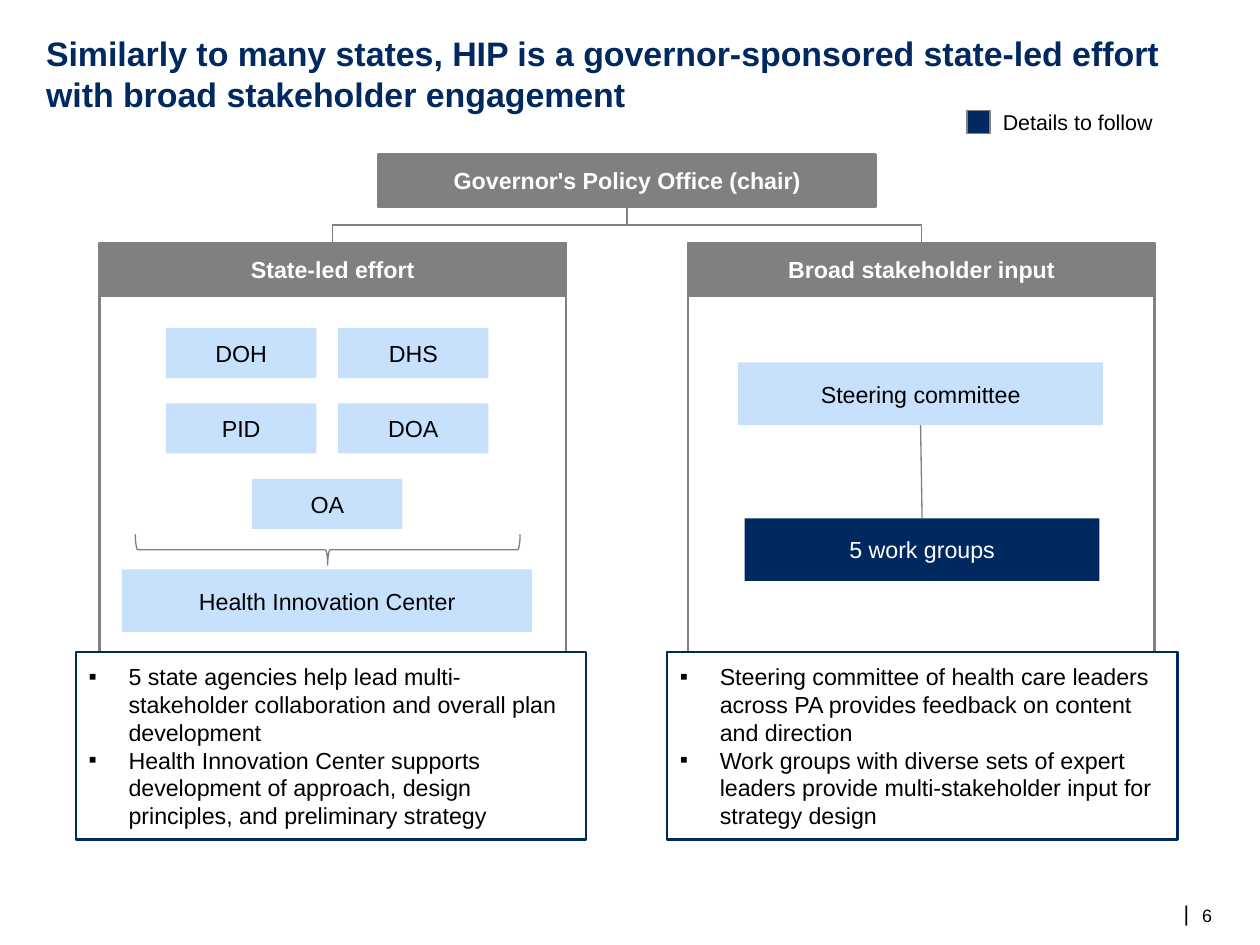
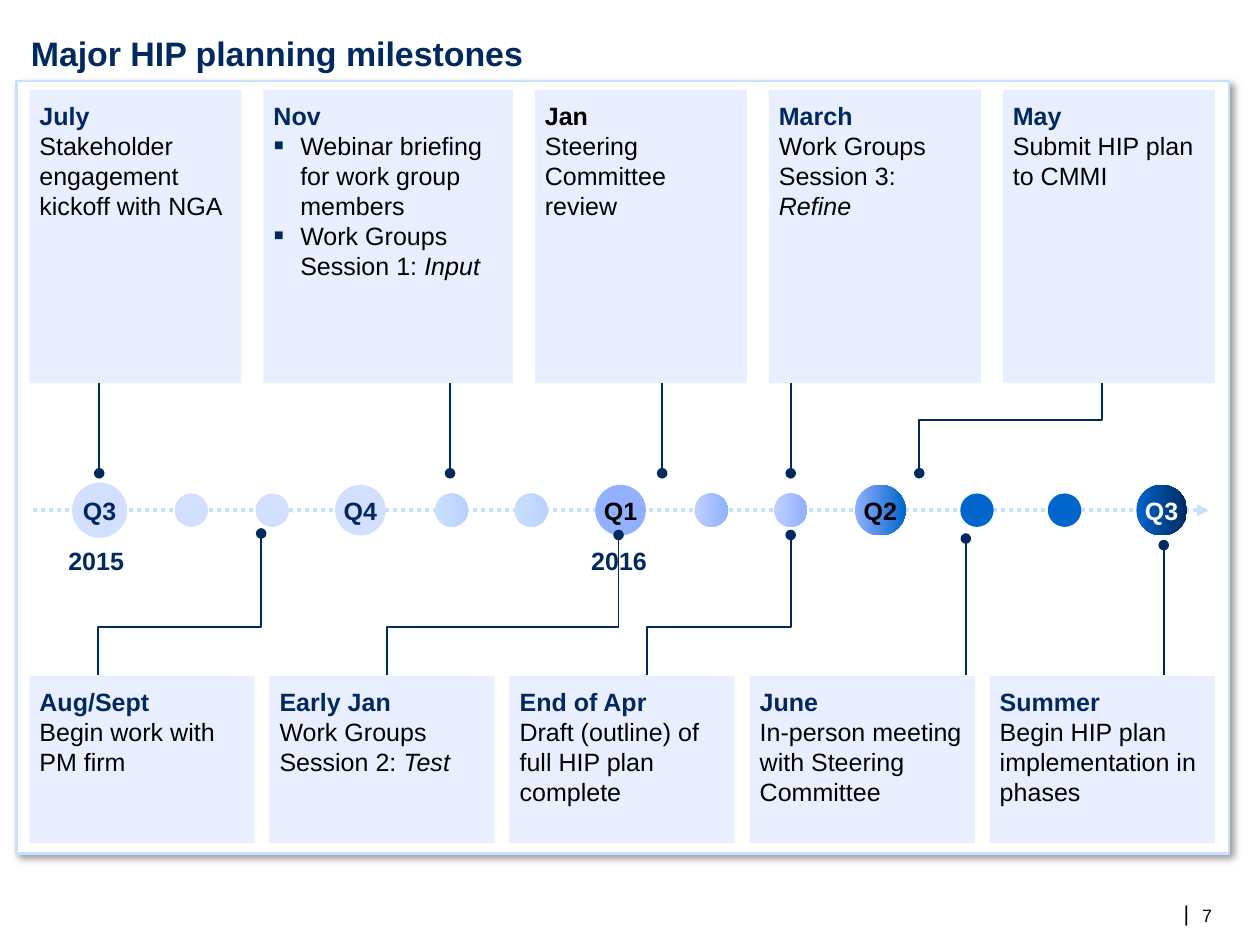
from typing import NamedTuple

from lxml.etree import SubElement
from pptx import Presentation
from pptx.dml.color import RGBColor
from pptx.enum.dml import MSO_LINE
from pptx.enum.shapes import MSO_CONNECTOR, MSO_SHAPE
from pptx.enum.text import MSO_ANCHOR, MSO_AUTO_SIZE, PP_ALIGN
from pptx.oxml.ns import qn
from pptx.util import Cm, Pt

NAVY = RGBColor(0x00, 0x29, 0x60)
BLUE = RGBColor(0x00, 0x66, 0xCC)
PERIWINKLE = RGBColor(0x91, 0xB0, 0xFF)
LAVENDER = RGBColor(0xBD, 0xD0, 0xFF)
PALE_LAVENDER = RGBColor(0xD3, 0xDF, 0xFF)
SKY = RGBColor(0xC7, 0xE0, 0xFB)
MIST = RGBColor(0xE9, 0xEF, 0xFF)
GRAY = RGBColor(0x80, 0x80, 0x80)
BLACK = RGBColor(0x00, 0x00, 0x00)
WHITE = RGBColor(0xFF, 0xFF, 0xFF)
FONT = "Arial"


class Box(NamedTuple):
    """A rectangle in centimetres."""
    left: float
    top: float
    width: float
    height: float

    def inner(self, left, top, width, height):
        """Return a box placed relative to this one."""
        return Box(self.left + left, self.top + top, width, height)

    def lengths(self):
        """Return the four sides as lengths."""
        return [Cm(value) for value in self]


def add_span(para, text, size, color=BLACK, bold=False, italic=False):
    """Append one formatted run."""
    span = para.add_run()
    span.text = text
    font = span.font
    font.name, font.size, font.bold, font.italic = FONT, Pt(size), bold, italic
    font.color.rgb = color


def set_frame(frame, anchor, inset_x=0.0, inset_y=0.0, wrap=True):
    """Set the anchor, insets and wrapping of a text frame."""
    frame.auto_size = MSO_AUTO_SIZE.NONE
    frame.word_wrap = wrap
    frame.vertical_anchor = anchor
    frame.margin_left = frame.margin_right = Cm(inset_x)
    frame.margin_top = frame.margin_bottom = Cm(inset_y)


def add_bullet(para, indent, color=BLACK, percent=100):
    """Give a paragraph a square bullet with a hanging indent."""
    properties = para._p.get_or_add_pPr()
    properties.set("marL", str(Cm(indent)))
    properties.set("indent", str(-Cm(indent)))
    tint = SubElement(properties, qn("a:buClr"))
    SubElement(tint, qn("a:srgbClr"), val=str(color))
    SubElement(properties, qn("a:buSzPct"), val=str(percent * 1000))
    SubElement(properties, qn("a:buFont"), typeface=FONT)
    SubElement(properties, qn("a:buChar"), char="▪")


def add_block(page, box, fill=None, outline=None, weight=1.5, shape=MSO_SHAPE.RECTANGLE):
    """Add a flat preset shape; two fill colours make a gradient."""
    block = page.shapes.add_shape(shape, *box.lengths())
    block.shadow.inherit = False
    if fill is None:
        block.fill.background()
    elif isinstance(fill, list):
        block.fill.gradient()
        block.fill.gradient_angle = 0
        for stop, color in zip(block.fill.gradient_stops, fill):
            stop.color.rgb = color
    else:
        block.fill.solid()
        block.fill.fore_color.rgb = fill
    if outline is None:
        block.line.fill.background()
    else:
        block.line.color.rgb = outline
        block.line.width = Pt(weight)
    return block


def add_label_block(page, box, text, fill=SKY, color=BLACK, bold=False, outline=None):
    """Add a rectangle with a centred label."""
    block = add_block(page, box, fill, outline)
    set_frame(block.text_frame, MSO_ANCHOR.MIDDLE, 0.25, 0.13)
    para = block.text_frame.paragraphs[0]
    para.alignment = PP_ALIGN.CENTER
    add_span(para, text, 13, color, bold)
    return block


def add_text(page, box, text, size, color=BLACK, bold=False, anchor=MSO_ANCHOR.TOP):
    """Add a line of plain text."""
    frame = page.shapes.add_textbox(*box.lengths()).text_frame
    set_frame(frame, anchor)
    add_span(frame.paragraphs[0], text, size, color, bold)


def style_line(line_shape, color, weight, tail=None, dash=None):
    """Format a line, with an optional dash and end mark."""
    line_shape.line.color.rgb = color
    line_shape.line.width = Pt(weight)
    if dash is not None:
        line_shape.line.dash_style = dash
    properties = line_shape.element.spPr
    if tail:
        SubElement(properties.find(qn("a:ln")), qn("a:tailEnd"), type=tail)
    if properties.find(qn("a:effectLst")) is None:
        SubElement(properties, qn("a:effectLst"))


def add_page(deck, title, title_box, number):
    """Add a page with its title and page number."""
    page = deck.slides.add_slide(deck.slide_layouts[5])
    holder = page.shapes.title
    holder.left, holder.top, holder.width, holder.height = title_box.lengths()
    set_frame(holder.text_frame, MSO_ANCHOR.TOP)
    para = holder.text_frame.paragraphs[0]
    para.alignment = PP_ALIGN.LEFT
    add_span(para, title, 19, NAVY, bold=True)
    add_text(page, Box(23.38, 17.78, 0.3, 0.51), "|", 12, anchor=MSO_ANCHOR.MIDDLE)
    add_text(page, Box(23.75, 17.88, 0.6, 0.43), number, 10, anchor=MSO_ANCHOR.MIDDLE)
    return page


def add_legend(page, box):
    """Add the swatch and its caption."""
    add_block(page, box.inner(0, 0.02, 0.46, 0.46), NAVY, GRAY, 0.75)
    add_text(page, box.inner(0.71, 0, box.width - 0.71, box.height), "Details to follow", 12)


def add_panel(page, box, heading):
    """Add a framed panel and return its header."""
    add_block(page, box, outline=GRAY)
    return add_label_block(page, box.inner(0, 0, box.width, 1.04), heading, GRAY, WHITE, True, GRAY)


def add_note(page, box, lines):
    """Add a framed box of bulleted lines."""
    note = add_block(page, box, WHITE, NAVY)
    frame = note.text_frame
    set_frame(frame, MSO_ANCHOR.MIDDLE, 0.25, 0.13)
    for index, text in enumerate(lines):
        para = frame.add_paragraph() if index else frame.paragraphs[0]
        para.alignment = PP_ALIGN.LEFT
        add_bullet(para, 0.79)
        add_span(para, text, 13)


def add_state_panel(page, box):
    """Add the panel of state agencies."""
    header = add_panel(page, box, "State-led effort")
    agencies = [("DOH", 0, 0), ("DHS", 1, 0), ("PID", 0, 1), ("DOA", 1, 1), ("OA", 0.5, 2)]
    for name, column, row in agencies:
        add_label_block(page, box.inner(1.32 + 3.4 * column, 1.68 + 1.49 * row, 2.97, 0.99), name)
    brace = add_block(page, box.inner(4.21, 2.26, 0.61, 7.6), None, GRAY, 0.75, MSO_SHAPE.LEFT_BRACE)
    brace.rotation = 270
    add_label_block(page, box.inner(0.45, 6.45, 8.1, 1.24), "Health Innovation Center")
    add_note(page, box.inner(-0.46, 8.08, 10.08, 3.71), [
        "5 state agencies help lead multi-stakeholder collaboration and overall plan development",
        "Health Innovation Center supports development of approach, design principles, "
        "and preliminary strategy"])
    return header


def add_stakeholder_panel(page, box):
    """Add the panel of the committee and work groups."""
    header = add_panel(page, box, "Broad stakeholder input")
    committee = add_label_block(page, box.inner(0.99, 2.36, 7.21, 1.24), "Steering committee")
    groups = add_label_block(page, box.inner(1.12, 5.44, 7.01, 1.24), "5 work groups", NAVY, WHITE)
    link = page.shapes.add_connector(MSO_CONNECTOR.STRAIGHT, 0, 0, 0, 0)
    link.begin_connect(committee, 2)
    link.end_connect(groups, 0)
    style_line(link, GRAY, 0.75)
    add_note(page, box.inner(-0.41, 8.08, 10.08, 3.71), [
        "Steering committee of health care leaders across PA provides feedback on content and direction",
        "Work groups with diverse sets of expert leaders provide multi-stakeholder input "
        "for strategy design"])
    return header


def connect_down(page, parent, child):
    """Join two blocks by an elbow that leaves downwards."""
    elbow = page.shapes.add_connector(MSO_CONNECTOR.ELBOW, 0, 0, 0, 0)
    elbow.begin_connect(parent, 2)
    elbow.end_connect(child, 0)
    start, end, top = elbow.begin_x, elbow.end_x, elbow.begin_y
    drop, reach = elbow.end_y - top, abs(end - start)
    elbow.left = (start + end - drop) // 2
    elbow.top = top + (drop - reach) // 2
    elbow.width, elbow.height = drop, reach
    transform = elbow.element.spPr.find(qn("a:xfrm"))
    for flip in ("flipH", "flipV"):
        transform.attrib.pop(flip, None)
    transform.set("rot", "5400000" if end < start else "16200000")
    if end > start:
        transform.set("flipH", "1")
    style_line(elbow, GRAY, 0.75)


def add_card_row(page, box, cards):
    """Spread cards over the box with equal gaps."""
    gap = (box.width - sum(card[0] for card in cards)) / (len(cards) - 1)
    left = 0
    for width, heading, color, bulleted, lines in cards:
        card = add_block(page, box.inner(left, 0, width, box.height), MIST)
        frame = card.text_frame
        set_frame(frame, MSO_ANCHOR.TOP, 0.2, 0.2)
        frame.paragraphs[0].alignment = PP_ALIGN.LEFT
        add_span(frame.paragraphs[0], heading, 14, color, bold=True)
        for text, stress in lines:
            para = frame.add_paragraph()
            para.alignment = PP_ALIGN.LEFT
            if bulleted:
                add_bullet(para, 0.53, NAVY, 125)
            add_span(para, text, 14)
            if stress:
                add_span(para, stress, 14, italic=True)
        left += width + gap


def add_timeline(page, box):
    """Add the dotted arrow with its quarter and month marks."""
    middle = box.top + box.height / 2
    axis = page.shapes.add_connector(MSO_CONNECTOR.STRAIGHT, Cm(box.left), Cm(middle),
                                     Cm(box.left + box.width), Cm(middle))
    style_line(axis, SKY, 2.25, "triangle", MSO_LINE.ROUND_DOT)
    early, late = [SKY, LAVENDER], [LAVENDER, PERIWINKLE]
    marks = [
        (1.31, 1.09, PALE_LAVENDER, "Q3", NAVY), (3.12, 0.66, PALE_LAVENDER, "", None),
        (4.72, 0.66, PALE_LAVENDER, "", None), (6.46, 1, PALE_LAVENDER, "Q4", NAVY),
        (8.26, 0.66, early, "", None), (9.83, 0.66, early, "", None),
        (11.6, 1, PERIWINKLE, "Q1", BLACK), (13.39, 0.66, late, "", None),
        (14.96, 0.66, late, "", None), (16.73, 1, [PERIWINKLE, BLUE], "Q2", BLACK),
        (18.64, 0.66, BLUE, "", None), (20.37, 0.66, BLUE, "", None),
        (22.29, 1, [BLUE, NAVY], "Q3", WHITE)]
    for center, size, fill, label, color in marks:
        place = box.inner(center - size / 2, (box.height - size) / 2, size, size)
        mark = add_block(page, place, fill, shape=MSO_SHAPE.OVAL)
        if label:
            set_frame(mark.text_frame, MSO_ANCHOR.MIDDLE, 0, 0.13, wrap=False)
            para = mark.text_frame.paragraphs[0]
            para.alignment = PP_ALIGN.CENTER
            add_span(para, label, 14, color, bold=True)
    for left, year in [(0.69, "2015"), (11.02, "2016")]:
        add_text(page, box.inner(left, 1.24, 1.4, 0.64), year, 14, NAVY, bold=True)


def add_leaders(page, box):
    """Lead from the cards above and below to the timeline."""
    upper, lower = (0, 0.73), (5.77, 4.82)
    leaders = [
        (upper, 1.38, 1.38, 1.78), (upper, 8.31, 8.31, 1.78), (upper, 12.5, 12.5, 1.78),
        (upper, 15.04, 15.04, 1.78), (upper, 21.19, 17.58, 1.78), (lower, 1.35, 4.58, 2.97),
        (lower, 7.07, 11.64, 3), (lower, 12.2, 15.04, 3), (lower, 18.5, 18.5, 3.07),
        (lower, 22.41, 22.41, 3.2)]
    for (card_y, bend_y), card_x, dot_x, dot_y in leaders:
        corners = [(card_x, card_y), (card_x, bend_y), (dot_x, bend_y), (dot_x, dot_y)]
        points = [(Cm(box.left + x), Cm(box.top + y)) for x, y in corners]
        if card_x == dot_x:
            leader = page.shapes.add_connector(MSO_CONNECTOR.STRAIGHT, *points[0], *points[-1])
        else:
            outline = page.shapes.build_freeform(*points[0])
            outline.add_line_segments(points[1:], close=False)
            leader = outline.convert_to_shape()
            leader.fill.background()
        style_line(leader, NAVY, 1, "oval")


def add_backdrop(page, box):
    """Add the framed backdrop with a soft shadow."""
    backdrop = add_block(page, box, WHITE, SKY)
    effects = backdrop.element.spPr.find(qn("a:effectLst"))
    shadow = SubElement(effects, qn("a:outerShdw"), blurRad=str(Pt(4)), dist=str(Pt(3)),
                        dir="2700000", algn="tl", rotWithShape="0")
    tint = SubElement(shadow, qn("a:srgbClr"), val=str(BLACK))
    SubElement(tint, qn("a:alpha"), val="40000")


def build_structure_page(deck):
    """Build the page on how the effort is organised."""
    page = add_page(deck, "Similarly to many states, HIP is a governor-sponsored state-led effort "
                    "with broad stakeholder engagement", Box(0.91, 0.64, 23.39, 1.63), "6")
    add_legend(page, Box(19.1, 2.16, 4, 0.51))
    chair = add_label_block(page, Box(7.47, 3.05, 9.83, 1.04), "Governor's Policy Office (chair)",
                            GRAY, WHITE, True, GRAY)
    connect_down(page, chair, add_state_panel(page, Box(1.96, 4.8, 9.22, 9.04)))
    connect_down(page, chair, add_stakeholder_panel(page, Box(13.59, 4.8, 9.22, 9.04)))


def build_milestone_page(deck):
    """Build the page on the planning milestones."""
    page = add_page(deck, "Major HIP planning milestones", Box(0.61, 0.64, 22.96, 0.81), "7")
    add_backdrop(page, Box(0.33, 1.6, 23.95, 15.27))
    add_timeline(page, Box(0.66, 9.53, 23.22, 1.1))
    add_card_row(page, Box(0.58, 1.78, 23.42, 5.79), [
        (4.19, "July", NAVY, False, [("Stakeholder engagement kickoff with NGA", "")]),
        (4.93, "Nov", NAVY, True, [("Webinar briefing for work group members", ""),
                                   ("Work Groups Session 1: ", "Input")]),
        (4.19, "Jan", BLACK, False, [("Steering Committee review", "")]),
        (4.19, "March", NAVY, False, [("Work Groups Session 3: ", "Refine")]),
        (4.19, "May", NAVY, False, [("Submit HIP plan to CMMI", "")])])
    add_card_row(page, Box(0.58, 13.36, 23.42, 3.3), [
        (4.45, "Aug/Sept", NAVY, False, [("Begin work with PM firm", "")]),
        (4.45, "Early Jan", NAVY, False, [("Work Groups Session 2: ", "Test")]),
        (4.45, "End of Apr", NAVY, False, [("Draft (outline) of full HIP plan complete", "")]),
        (4.45, "June", NAVY, False, [("In-person meeting with Steering Committee", "")]),
        (4.45, "Summer", NAVY, False, [("Begin HIP plan implementation in phases", "")])])
    add_leaders(page, Box(0.58, 7.57, 23.42, 5.79))


def main():
    """Build and save the deck."""
    deck = Presentation()
    deck.slide_width, deck.slide_height = Cm(24.89), Cm(18.67)
    build_structure_page(deck)
    build_milestone_page(deck)
    deck.save("out.pptx")


if __name__ == "__main__":
    main()
